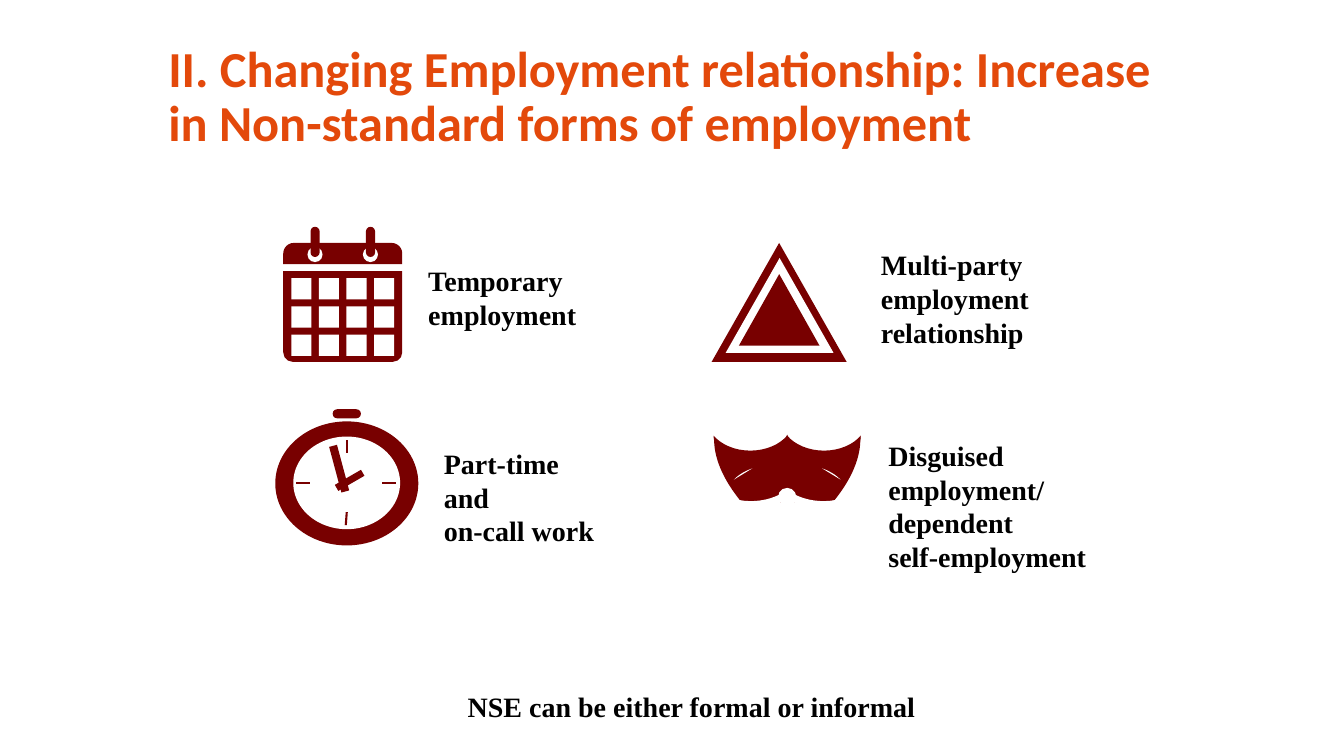
from lxml import etree
from pptx import Presentation
from pptx.dml.color import RGBColor
from pptx.enum import shapes, text
from pptx.oxml import ns
from pptx.util import Pt

MAROON = RGBColor(0x78, 0x00, 0x00)
ORANGE = RGBColor(0xE3, 0x49, 0x0B)
WHITE = RGBColor(0xFF, 0xFF, 0xFF)
BLACK = RGBColor(0x00, 0x00, 0x00)
KIND = shapes.MSO_SHAPE


def write(frame, *lines, font="Times New Roman", size=20, color=BLACK, spacing=1.0):
    frame.word_wrap = True
    for index, line in enumerate(lines):
        paragraph = frame.add_paragraph() if index else frame.paragraphs[0]
        paragraph.alignment = text.PP_ALIGN.LEFT
        paragraph.line_spacing = spacing
        run = paragraph.add_run()
        run.text = line
        run.font.name = font
        run.font.size = Pt(size)
        run.font.bold = True
        run.font.color.rgb = color


class SlideBuilder:
    """Draws on one slide; all lengths are points."""

    def __init__(self, slide):
        self.slide = slide
        self.target = slide.shapes

    def title(self, content, left, top, width, height):
        title = self.slide.shapes.title
        title.left, title.top, title.width, title.height = map(Pt, (left, top, width, height))
        frame = title.text_frame
        frame.auto_size = text.MSO_AUTO_SIZE.NONE
        frame.vertical_anchor = text.MSO_ANCHOR.MIDDLE
        write(frame, content, font="Calibri", size=36, color=ORANGE, spacing=0.9)

    def label(self, lines, left, top, width, height):
        box = self.slide.shapes.add_textbox(Pt(left), Pt(top), Pt(width), Pt(height))
        write(box.text_frame, *lines)
        box.text_frame.auto_size = text.MSO_AUTO_SIZE.SHAPE_TO_FIT_TEXT

    def start_icon(self):
        """Collect the shapes that follow in a new group."""
        self.target = self.slide.shapes.add_group_shape().shapes

    def shape(self, kind, left, top, width, height, color=MAROON, adjust=(), rotation=0, flip=None):
        shape = self.target.add_shape(kind, Pt(left), Pt(top), Pt(width), Pt(height))
        shape.shadow.inherit = False
        shape.fill.solid()
        shape.fill.fore_color.rgb = color
        shape.line.fill.background()
        for index, value in enumerate(adjust):
            shape.adjustments[index] = value
        shape.rotation = rotation
        if flip:
            shape._element.spPr.find(ns.qn("a:xfrm")).set(flip, "1")

    def mirrored_pair(self, axis, kind, left, top, width, height, color, adjust=(), rotation=0):
        """Draw a shape and its reflection in the vertical line x = axis."""
        self.shape(kind, left, top, width, height, color, adjust, rotation)
        self.shape(kind, 2 * axis - left - width, top, width, height, color, adjust,
                   -rotation % 360, "flipH")

    def line(self, x1, y1, x2, y2):
        line = self.target.add_connector(shapes.MSO_CONNECTOR.STRAIGHT, Pt(x1), Pt(y1), Pt(x2), Pt(y2))
        line.line.color.rgb = MAROON
        line.line.width = Pt(1.5)
        etree.SubElement(line._element.spPr, ns.qn("a:effectLst"))


def draw_calendar(builder):
    builder.start_icon()
    builder.shape(KIND.ROUND_2_SAME_RECTANGLE, 202.3, 173.5, 85, 15.1, adjust=(0.5, 0))
    builder.shape(KIND.ROUND_2_SAME_RECTANGLE, 202.3, 193.7, 85, 64.8, adjust=(0.104, 0), flip="flipV")
    for row in range(3):
        for column in range(4):
            builder.shape(KIND.RECTANGLE, 208.1 + 19.7 * column, 198.7 + 20.2 * row, 14.4, 15.1, WHITE)
    for ring in (219.6, 259.2):
        builder.shape(KIND.OVAL, ring, 176.4, 10.8, 10.8, WHITE)
        builder.shape(KIND.ROUNDED_RECTANGLE, ring + 2.2, 162, 6.5, 21.6, adjust=(0.5,))


def draw_stopwatch(builder):
    builder.start_icon()
    builder.shape(KIND.OVAL, 196.6, 301, 102.2, 88.6)
    builder.shape(KIND.OVAL, 209.5, 311.8, 76.3, 66.2, WHITE)
    for tick in ((211.7, 344.9, 221.8, 344.9), (272.9, 344.9, 283, 344.9),
                 (247.7, 323.3, 247.7, 314.6), (247, 375.1, 247.7, 365.8)):
        builder.line(*tick)
    builder.shape(KIND.RECTANGLE, 225.4, 331.9, 33.8, 5.8, rotation=75)
    builder.shape(KIND.RECTANGLE, 239, 340.6, 21.6, 5, rotation=330)
    builder.shape(KIND.ROUNDED_RECTANGLE, 237.6, 292.3, 20.2, 6.5, adjust=(0.5,))


def draw_triangle(builder):
    builder.start_icon()
    builder.shape(KIND.ISOSCELES_TRIANGLE, 508.3, 173.5, 96.5, 85)
    builder.shape(KIND.ISOSCELES_TRIANGLE, 518.4, 184.3, 77, 67.7, WHITE)
    builder.shape(KIND.ISOSCELES_TRIANGLE, 527.8, 195.8, 57.6, 51.1)


def draw_mask(builder):
    axis = 562.3
    builder.start_icon()
    builder.shape(KIND.HEART, 510.5, 283.7, 103.7, 105.1)
    builder.mirrored_pair(axis, KIND.OVAL, 508.3, 281.5, 55, 45.4, WHITE)
    builder.mirrored_pair(axis, KIND.MOON, 526.3, 294.5, 19.4, 52.6, MAROON, (0.444,), 270)
    # Chord angles are in 60000ths of a degree, adjustments in 100000ths
    chord_angles = [degrees * 0.6 for degrees in (27, 107.81)]
    builder.mirrored_pair(axis, KIND.CHORD, 519.8, 334.8, 36.7, 17.3, WHITE, chord_angles, 156.9)
    builder.mirrored_pair(axis, KIND.MOON, 532.1, 334.1, 14.4, 47.5, WHITE, rotation=266.6)
    builder.shape(KIND.ISOSCELES_TRIANGLE, 520.6, 359.3, 83.5, 36, WHITE, flip="flipV")
    builder.shape(KIND.OVAL, 555.8, 348.5, 13, 13, WHITE)


def main():
    presentation = Presentation()
    presentation.slide_width, presentation.slide_height = Pt(960), Pt(540)
    title_only = presentation.slide_layouts[5]
    builder = SlideBuilder(presentation.slides.add_slide(title_only))
    builder.title("II. Changing Employment relationship: Increase in Non-standard forms of employment",
                  113, 5.8, 718.6, 128.9)
    draw_calendar(builder)
    builder.label(["Temporary employment"], 298.8, 185, 136.1, 55.4)
    draw_stopwatch(builder)
    builder.label(["Part-time and", "on-call work"], 309.9, 315.4, 130.3, 79.9)
    draw_triangle(builder)
    builder.label(["Multi-party employment relationship"], 622.1, 173.5, 138.2, 79.9)
    draw_mask(builder)
    builder.label(["Disguised employment/", "dependent", "self-employment"], 627.5, 309.6, 169.9, 104.4)
    builder.label(["NSE can be either formal or informal"], 326.9, 488.9, 339.8, 31.7)
    presentation.save("out.pptx")


if __name__ == "__main__":
    main()
